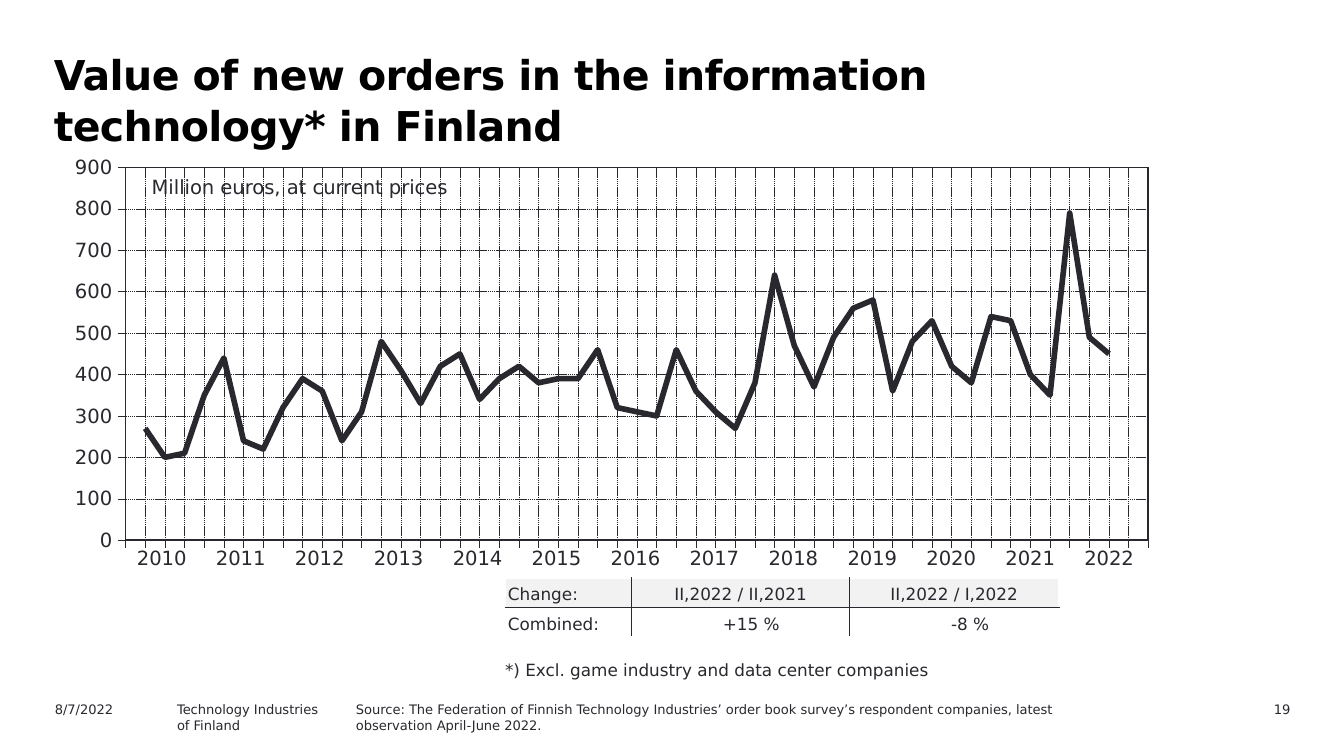
"""Build a slide on the value of new orders in information technology."""
from lxml import etree
from pptx import Presentation
from pptx.chart.data import CategoryChartData
from pptx.dml.color import RGBColor
from pptx.enum import chart as ch, dml, text
from pptx.oxml import parse_xml
from pptx.oxml.ns import nsdecls, qn
from pptx.util import Pt

HUE = {"ink": "29282E", "black": "000000", "white": "FFFFFF", "band": "F2F2F2"}
FACE = "DejaVu Sans"
LEFT, MID, RIGHT = text.PP_ALIGN.LEFT, text.PP_ALIGN.CENTER, text.PP_ALIGN.RIGHT
PLAIN = "{2D5ABB26-0587-4C30-8999-92F81FD0307C}"

TITLE = "Value of new orders in the information technology* in Finland"
ORDERS = [
    None,
    270, 200, 210, 350, 440, 240, 220, 320, 390, 360, 240, 310, 480,
    410, 330, 420, 450, 340, 390, 420, 380, 390, 390, 460, 320, 310,
    300, 460, 360, 310, 270, 380, 640, 470, 370, 490, 560, 580, 360,
    480, 530, 420, 380, 540, 530, 400, 350, 790, 490, 450, None, None,
]
YEARS = [str(year) for year in range(2010, 2023)]
CHANGE = [
    ("Change:", "II,2022 / II,2021", "II,2022 / I,2022"),
    ("Combined:", "+15 %", "-8 %"),
]
PLOT = {"x": 0.068, "y": 0.041, "w": 0.829, "h": 0.833}
UNIT = ("Million euros, at current prices", (74.2, 90, 175.7, 19.4), 10.5, LEFT)
NOTES = [
    ("*) Excl. game industry and data center companies",
     (263.5, 350, 268.6, 18), 9, LEFT),
    ("Source: The Federation of Finnish Technology Industries’ order book "
     "survey’s respondent companies, latest observation April-June 2022.",
     (183.6, 372.2, 391.7, 28.8), 7, LEFT),
    ("Technology Industries\nof Finland", (87.8, 372.2, 129.6, 13), 7, LEFT),
    ("8/7/2022", (22.3, 372.2, 72, 13), 7, LEFT),
    ("19", (630.7, 372.2, 67.7, 13), 7, RIGHT),
]


def rgb(name):
    return RGBColor.from_string(HUE[name])


def style(font, size, hue="ink", bold=False):
    font.name, font.size, font.bold = FACE, Pt(size), bold
    font.color.rgb = rgb(hue)


def stroke(line, width, dash=None):
    line.color.rgb = rgb("ink")
    line.width = Pt(width)
    if dash:
        line.dash_style = dash


def add_head(slide):
    head = slide.shapes.title
    head.left, head.top, head.width, head.height = map(Pt, (20.2, 22.3, 629.3, 51.1))
    frame = head.text_frame
    frame.auto_size = text.MSO_AUTO_SIZE.NONE
    frame.vertical_anchor = text.MSO_ANCHOR.TOP
    frame.margin_left = Pt(8.6)
    frame.text = TITLE
    para = frame.paragraphs[0]
    para.alignment, para.line_spacing = LEFT, Pt(27)
    style(para.font, 22, "black", True)
    para.runs[0].font._element.set("spc", "-30")


def add_note(slide, words, box, size, align):
    frame = slide.shapes.add_textbox(*map(Pt, box)).text_frame
    frame.word_wrap = True
    frame.text = words
    for para in frame.paragraphs:
        para.alignment = align
        style(para.font, size)
    return frame


def add_plot(slide):
    data = CategoryChartData(number_format="#,##0")
    data.categories = [str(i + 1) for i in range(len(ORDERS))]
    data.add_series("Series 1", ORDERS)
    chart = slide.shapes.add_chart(
        ch.XL_CHART_TYPE.LINE, *map(Pt, (22.3, 79.9, 661, 239.8)), data).chart
    chart.has_legend = chart.has_title = False
    style(chart.font, 10.5)
    plot = chart.plots[0]
    plot.vary_by_categories = False
    line = plot.series[0]
    line.smooth = False
    line.marker.style = ch.XL_MARKER_STYLE.NONE
    stroke(line.format.line, 3)
    for axis in (chart.category_axis, chart.value_axis):
        axis.major_tick_mark = ch.XL_TICK_MARK.OUTSIDE
        axis.minor_tick_mark = ch.XL_TICK_MARK.NONE
        axis.has_major_gridlines = True
        stroke(axis.format.line, 0.22)
        stroke(axis.major_gridlines.format.line, 0.25, dml.MSO_LINE.SQUARE_DOT)
    chart.category_axis.tick_label_position = ch.XL_TICK_LABEL_POSITION.NONE
    axis = chart.value_axis
    axis.minimum_scale, axis.maximum_scale, axis.major_unit = 0, 900, 100
    axis.tick_labels.number_format = "#,##0"
    axis.tick_labels.number_format_is_linked = False
    style(axis.tick_labels.font, 10.5)
    axis._element.find(qn("c:crosses")).addnext(
        parse_xml(f'<c:crossBetween {nsdecls("c")} val="midCat"/>'))
    area = chart._chartSpace.chart.plotArea
    for old in area.findall(qn("c:layout")):
        area.remove(old)
    modes = "".join(f'<c:{k}Mode val="edge"/>' for k in "xy")
    spots = "".join(f'<c:{k} val="{v}"/>' for k, v in PLOT.items())
    area.insert(0, parse_xml(
        f'<c:layout {nsdecls("c")}><c:manualLayout><c:layoutTarget val="inner"/>'
        f"{modes}{spots}</c:manualLayout></c:layout>"))
    area.append(parse_xml(
        f'<c:spPr {nsdecls("c", "a")}><a:noFill/><a:ln w="{Pt(1)}"><a:solidFill>'
        f'<a:srgbClr val="{HUE["ink"]}"/></a:solidFill></a:ln></c:spPr>'))


def add_grid(slide, rows, box, widths):
    shape = slide.shapes.add_table(len(rows), len(rows[0]), *map(Pt, box))
    grid = shape.table
    grid.first_row = grid.horz_banding = False
    grid._tbl.tblPr.find(qn("a:tableStyleId")).text = PLAIN
    for col, width in zip(grid.columns, widths):
        col.width = Pt(width)
    for row in grid.rows:
        row.height = Pt(box[3] / len(rows))
    return grid


def fill_cell(cell, words, size, align):
    cell.text = words
    para = cell.text_frame.paragraphs[0]
    para.alignment = align
    style(para.font, size)


def edge(cell, sides):
    props = cell._tc.get_or_add_tcPr()
    for spot, (side, hue) in enumerate(sides.items()):
        line = etree.Element(qn(f"a:ln{side}"), w=str(Pt(1)))
        solid = etree.SubElement(line, qn("a:solidFill"))
        etree.SubElement(solid, qn("a:srgbClr"), val=HUE[hue])
        props.insert(spot, line)


def add_change(slide):
    grid = add_grid(slide, CHANGE, (270.7, 309.6, 296.6, 31.7), (67.7, 116.6, 112.3))
    for r, row in enumerate(CHANGE):
        for c, words in enumerate(row):
            cell = grid.cell(r, c)
            fill_cell(cell, words, 9, LEFT if c == 0 else RIGHT if r else MID)
            cell.vertical_anchor = text.MSO_ANCHOR.BOTTOM
            cell.margin_left = cell.margin_top = cell.margin_bottom = Pt(1.4)
            cell.margin_right = Pt(37.4 if r and c else 1.4)
            cell.fill.solid()
            cell.fill.fore_color.rgb = rgb("white" if r else "band")
            edge(cell, {"L": "ink" if c else "white", "R": "ink" if c < 2 else "white",
                        "T": "ink" if r else "white", "B": "white" if r else "ink"})


def add_years(slide):
    wide = 550
    grid = add_grid(slide, [YEARS], (65.5, 289.4, wide, 22.3),
                    [wide / len(YEARS)] * len(YEARS))
    for c, year in enumerate(YEARS):
        cell = grid.cell(0, c)
        cell.fill.background()
        fill_cell(cell, year, 10.5, MID)


def main():
    deck = Presentation()
    deck.slide_width, deck.slide_height = Pt(720), Pt(405)
    slide = deck.slides.add_slide(deck.slide_layouts[5])
    add_head(slide)
    add_plot(slide)
    add_note(slide, *UNIT).word_wrap = False
    add_change(slide)
    for note in NOTES:
        add_note(slide, *note)
    add_years(slide)
    deck.save("out.pptx")


if __name__ == "__main__":
    main()
